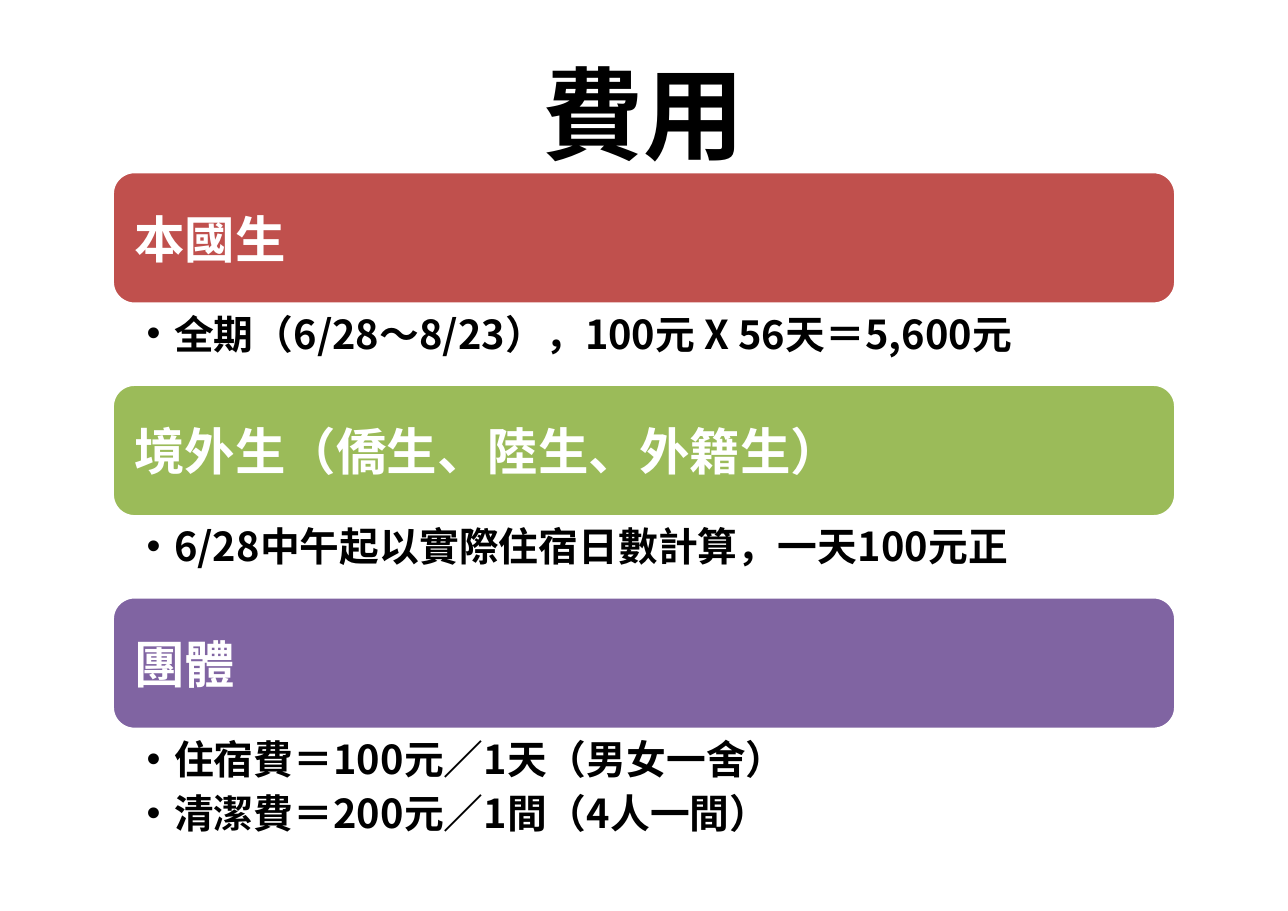
"""Builds the slide that lists the dormitory fees of three groups."""
from lxml.etree import SubElement
from pptx import Presentation
from pptx.dml.color import RGBColor
from pptx.enum.shapes import MSO_SHAPE
from pptx.enum.text import MSO_ANCHOR, MSO_AUTO_SIZE, PP_ALIGN
from pptx.oxml.ns import qn
from pptx.util import Inches, Pt

FONT = "Noto Sans CJK SC"
BLACK = RGBColor(0x00, 0x00, 0x00)
WHITE = RGBColor(0xFF, 0xFF, 0xFF)
RED = RGBColor(0xC0, 0x50, 0x4D)
GREEN = RGBColor(0x9B, 0xBB, 0x59)
PURPLE = RGBColor(0x80, 0x64, 0xA2)

LEFT, TOP, WIDTH = 1.02, 1.56, 9.65
BAR_HEIGHT, LINE_HEIGHT, EXTRA_LINE = 1.2, 0.73, 0.54

GROUPS = [
    ("本國生", RED, ["全期（6/28～8/23），100元 X 56天＝5,600元"]),
    ("境外生（僑生、陸生、外籍生）", GREEN,
     ["6/28中午起以實際住宿日數計算，一天100元正"]),
    ("團體", PURPLE,
     ["住宿費＝100元／1天（男女一舍）", "清潔費＝200元／1間（4人一間）"]),
]


def style_paragraph(paragraph, size, color, align=PP_ALIGN.LEFT):
    paragraph.alignment = align
    font = paragraph.font
    font.size, font.bold, font.name = Pt(size), True, FONT
    font.color.rgb = color
    properties = paragraph._p.pPr.find(qn("a:defRPr"))
    SubElement(properties, qn("a:ea"), typeface=FONT)


def set_frame(frame, anchor, left, top, right, bottom):
    frame.word_wrap = True
    frame.auto_size = MSO_AUTO_SIZE.NONE
    frame.vertical_anchor = anchor
    frame.margin_left, frame.margin_top = Inches(left), Inches(top)
    frame.margin_right, frame.margin_bottom = Inches(right), Inches(bottom)


def add_bullet(paragraph):
    properties = paragraph._p.get_or_add_pPr()
    properties.set("marL", str(Inches(0.25)))
    properties.set("indent", str(Inches(-0.25)))
    SubElement(properties, qn("a:buFont"), typeface="Arial")
    SubElement(properties, qn("a:buChar"), char="•")


def add_title(page, text):
    title = page.shapes.title
    title.left, title.top = Inches(0.58), Inches(0.33)
    title.width, title.height = Inches(10.53), Inches(1.38)
    frame = title.text_frame
    set_frame(frame, MSO_ANCHOR.MIDDLE, 0.11, 0.06, 0.11, 0.06)
    frame.text = text
    style_paragraph(frame.paragraphs[0], 66, BLACK, PP_ALIGN.CENTER)


def add_bar(page, top, text, color):
    bar = page.shapes.add_shape(
        MSO_SHAPE.ROUNDED_RECTANGLE,
        Inches(LEFT), Inches(top), Inches(WIDTH), Inches(BAR_HEIGHT))
    bar.shadow.inherit = False
    bar.fill.solid()
    bar.fill.fore_color.rgb = color
    bar.line.color.rgb = WHITE
    bar.line.width = Pt(2)
    frame = bar.text_frame
    set_frame(frame, MSO_ANCHOR.MIDDLE, 0.14, 0.14, 0.14, 0.14)
    frame.text = text
    style_paragraph(frame.paragraphs[0], 33, WHITE)


def add_fees(page, top, height, fees):
    box = page.shapes.add_textbox(
        Inches(LEFT), Inches(top), Inches(WIDTH), Inches(height))
    frame = box.text_frame
    set_frame(frame, MSO_ANCHOR.TOP, 0.31, 0.05, 0.26, 0.05)
    frame.text = "\n".join(fees)
    for index, paragraph in enumerate(frame.paragraphs):
        add_bullet(paragraph)
        style_paragraph(paragraph, 26, BLACK)
        paragraph.space_after = Pt(5.2)
        if index:
            paragraph.line_spacing = Pt(30)


def main():
    deck = Presentation()
    deck.slide_width, deck.slide_height = Inches(11.69), Inches(8.27)
    page = deck.slides.add_slide(deck.slide_layouts[5])
    add_title(page, "費用")
    top = TOP
    for name, color, fees in GROUPS:
        height = LINE_HEIGHT + EXTRA_LINE * (len(fees) - 1)
        add_bar(page, top, name, color)
        add_fees(page, top + BAR_HEIGHT, height, fees)
        top += BAR_HEIGHT + height
    deck.save("out.pptx")


if __name__ == "__main__":
    main()
